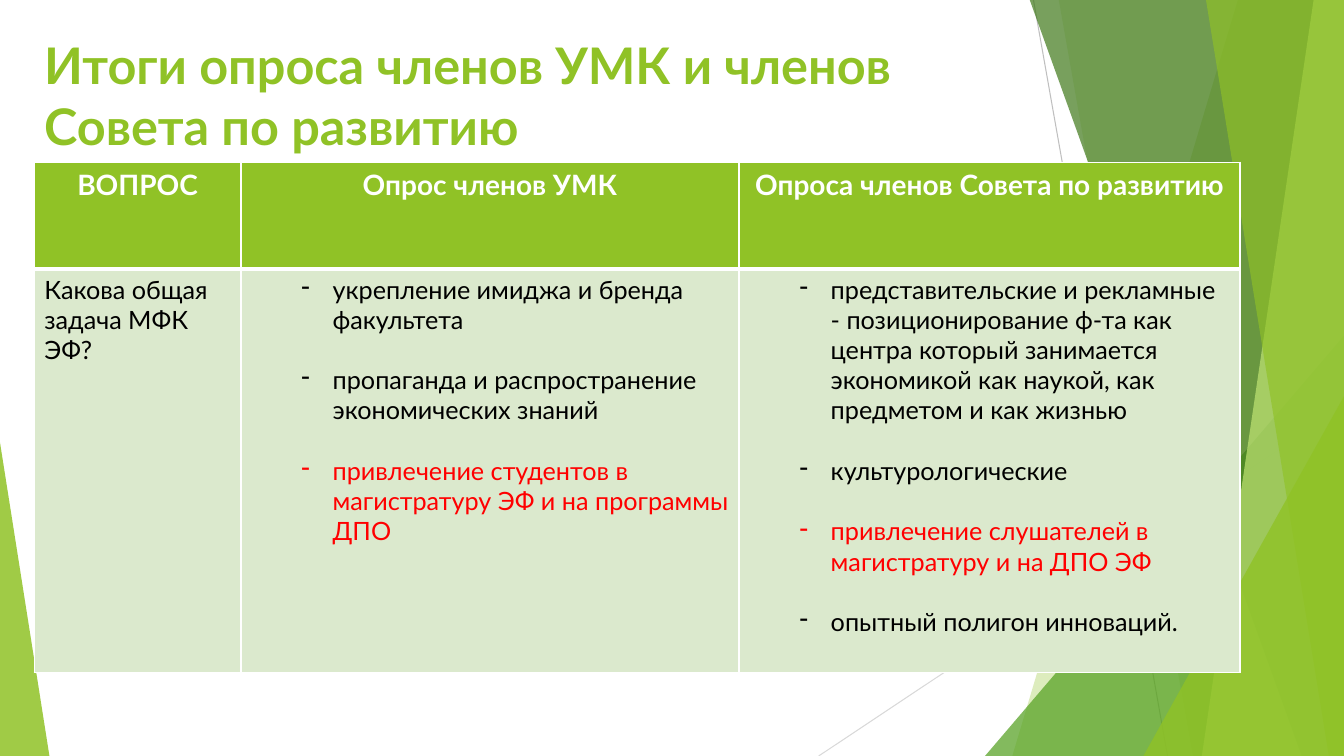
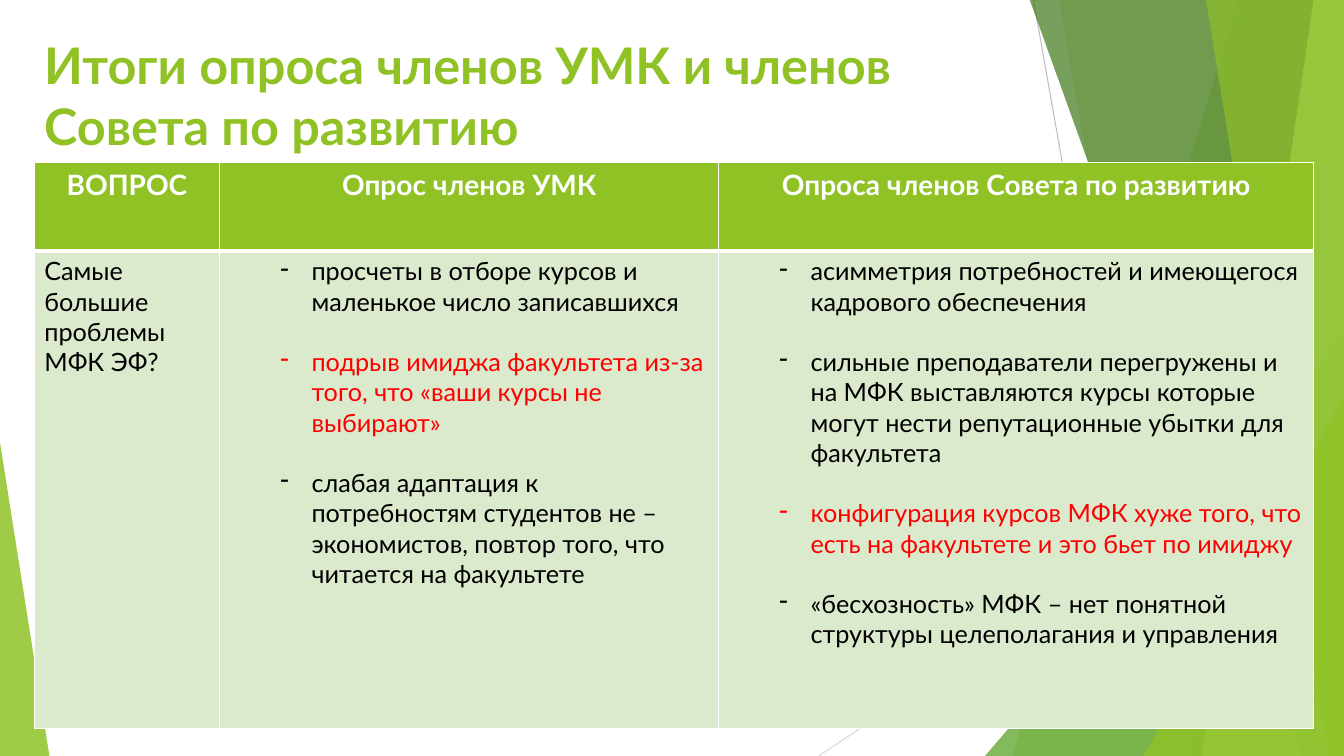
from dataclasses import dataclass

from lxml import etree
from pptx import Presentation
from pptx import util as u
from pptx.dml.color import RGBColor
from pptx.enum import shapes, text
from pptx.oxml import ns


@dataclass(frozen=True)
class Theme:
    font: str = "Lato"
    green: str = "90C226"
    leaf: str = "54A021"
    forest: str = "3F7819"
    lime: str = "C0E474"
    pale: str = "DBE9CD"
    white: str = "FFFFFF"
    black: str = "000000"
    red: str = "FF0000"
    dark_rule: str = "BFBFBF"
    light_rule: str = "D9D9D9"
    title_size: int = 36
    header_size: int = 20
    body_size: int = 18
    item_gap: float = 21.6
    rule_width: float = 0.75
    border: int = 1
    header_border: int = 3


WIDTH, HEIGHT = 13.33, 7.5
BAND_TOP = -0.01
LEFT = 0.34
TITLE = "Итоги опроса членов УМК и членов Совета по развитию"
HEADERS = ["ВОПРОС", "Опрос членов УМК", "Опроса членов Совета по развитию"]


class SurveyDeck:
    def __init__(self, theme):
        self.theme = theme
        self.deck = Presentation()
        self.deck.slide_width = u.Inches(WIDTH)
        self.deck.slide_height = u.Inches(HEIGHT)
        self.page = None

    def add_page(self):
        self.page = self.deck.slides.add_slide(self.deck.slide_layouts[6])
        self.backdrop()
        self.title(TITLE)

    def backdrop(self):
        theme = self.theme
        self.rule((10.25, 0), (11.58, HEIGHT), theme.dark_rule)
        self.rule((WIDTH, 4.03), (8.12, HEIGHT), theme.light_rule)
        self.band(12.28, 10.04, theme.green, 30)
        self.band(10.5, 11.83, theme.green, 20)
        self.corner(9.77, 3.33, 3.56, 1, theme.leaf, 72)
        self.band(10.21, 12.91, theme.forest, 70)
        self.band(13.03, 11.92, theme.lime, 70)
        self.band(11.96, 13.18, theme.green, 65)
        self.corner(11.34, 3.93, 1.99, 1, theme.green, 80)
        self.corner(0, 4.39, 0.49, 0, theme.green, 85)

    def rule(self, start, end, color):
        points = [u.Inches(value) for value in (*start, *end)]
        line = self.page.shapes.add_connector(shapes.MSO_CONNECTOR.STRAIGHT, *points)
        line.line.color.rgb = RGBColor.from_string(color)
        line.line.width = u.Pt(self.theme.rule_width)
        properties = line._element.find(ns.qn("p:spPr"))
        etree.SubElement(properties, ns.qn("a:effectLst"))

    def band(self, top_x, bottom_x, color, opacity):
        builder = self.page.shapes.build_freeform(u.Inches(top_x), u.Inches(BAND_TOP))
        outline = [(WIDTH, BAND_TOP), (WIDTH, HEIGHT), (bottom_x, HEIGHT)]
        builder.add_line_segments([(u.Inches(x), u.Inches(y)) for x, y in outline])
        self.tint(builder.convert_to_shape(), color, opacity)

    def corner(self, left, top, width, apex, color, opacity):
        triangle = self.page.shapes.add_shape(
            shapes.MSO_SHAPE.ISOSCELES_TRIANGLE, u.Inches(left), u.Inches(top),
            u.Inches(width), u.Inches(HEIGHT - top))
        triangle.adjustments[0] = apex
        self.tint(triangle, color, opacity)

    def tint(self, shape, color, opacity):
        shape.shadow.inherit = False
        shape.line.fill.background()
        shape.fill.solid()
        shape.fill.fore_color.rgb = RGBColor.from_string(color)
        swatch = shape._element.find(".//" + ns.qn("a:srgbClr"))
        etree.SubElement(swatch, ns.qn("a:alpha"), val=str(opacity * 1000))

    def title(self, words):
        box = self.page.shapes.add_textbox(
            u.Inches(LEFT), u.Inches(0.29), u.Inches(9.7), u.Inches(1.44))
        box.text_frame.word_wrap = True
        box.text_frame.text = words
        self.style(box.text_frame.paragraphs[0], self.theme.title_size,
                   self.theme.green, bold=True)

    def style(self, para, size, color, bold=False):
        for span in para.runs:
            span.font.name = self.theme.font
            span.font.size = u.Pt(size)
            span.font.bold = bold
            span.font.color.rgb = RGBColor.from_string(color)

    def table(self, columns, rows, question, answers):
        theme = self.theme
        frame = self.page.shapes.add_table(
            len(rows), len(columns), u.Inches(LEFT), u.Inches(1.61),
            u.Inches(sum(columns)), u.Inches(sum(rows)))
        grid = frame.table
        grid.horz_banding = False
        for column, width in zip(grid.columns, columns):
            column.width = u.Inches(width)
        for row, height in zip(grid.rows, rows):
            row.height = u.Inches(height)
        for index, words in enumerate(HEADERS):
            cell = grid.cell(0, index)
            cell.text_frame.text = words
            para = cell.text_frame.paragraphs[0]
            para.alignment = text.PP_ALIGN.CENTER
            self.style(para, theme.header_size, theme.white, bold=True)
            self.paint(cell, theme.green, bottom=theme.header_border)
        cell = grid.cell(1, 0)
        cell.text_frame.text = question
        self.style(cell.text_frame.paragraphs[0], theme.body_size, theme.black)
        self.paint(cell, theme.pale, top=theme.header_border)
        for index, items in enumerate(answers, 1):
            cell = grid.cell(1, index)
            self.bullets(cell.text_frame, items)
            self.paint(cell, theme.pale, top=theme.header_border)

    def bullets(self, frame, items):
        theme = self.theme
        for index, (words, color) in enumerate(items):
            para = frame.add_paragraph() if index else frame.paragraphs[0]
            para.text = words
            para.level = 1
            if index:
                para.space_before = u.Pt(theme.item_gap)
            self.style(para, theme.body_size, color)
            properties = para._p.get_or_add_pPr()
            properties.set("marL", str(u.Inches(0.81)))
            properties.set("indent", str(u.Inches(-0.31)))
            etree.SubElement(properties, ns.qn("a:buChar"), char="-")

    def paint(self, cell, color, top=None, bottom=None):
        cell.fill.solid()
        cell.fill.fore_color.rgb = RGBColor.from_string(color)
        thin = self.theme.border
        edges = {"lnL": thin, "lnR": thin, "lnT": top or thin, "lnB": bottom or thin}
        properties = cell._tc.get_or_add_tcPr()
        for index, (edge, width) in enumerate(edges.items()):
            line = etree.Element(ns.qn("a:" + edge), w=str(u.Pt(width)))
            fill = etree.SubElement(line, ns.qn("a:solidFill"))
            etree.SubElement(fill, ns.qn("a:srgbClr"), val=self.theme.white)
            properties.insert(index, line)


def main():
    theme = Theme()
    survey = SurveyDeck(theme)

    survey.add_page()
    survey.table([2.05, 4.94, 4.97], [1.06, 4], "Какова общая задача МФК ЭФ?", [
        [
            ("укрепление имиджа и бренда факультета", theme.black),
            ("пропаганда и распространение экономических знаний", theme.black),
            ("привлечение студентов в магистратуру ЭФ и на программы ДПО", theme.red),
        ],
        [
            ("представительские и рекламные\v- позиционирование ф-та как центра "
             "который занимается экономикой как наукой, как предметом и как жизнью",
             theme.black),
            ("культурологические", theme.black),
            ("привлечение слушателей в магистратуру и на ДПО ЭФ", theme.red),
            ("опытный полигон инноваций.", theme.black),
        ],
    ])

    survey.add_page()
    survey.table([1.84, 4.95, 5.9], [0.88, 4.74], "Самые большие проблемы МФК ЭФ?", [
        [
            ("просчеты в отборе курсов и маленькое число записавшихся", theme.black),
            ("подрыв имиджа факультета из-за того, что «ваши курсы не выбирают»",
             theme.red),
            ("слабая адаптация к потребностям студентов не –экономистов, "
             "повтор того, что читается на факультете", theme.black),
        ],
        [
            ("асимметрия потребностей и имеющегося кадрового обеспечения", theme.black),
            ("сильные преподаватели перегружены и на МФК выставляются курсы "
             "которые могут нести репутационные убытки для факультета", theme.black),
            ("конфигурация курсов МФК хуже того, что есть на факультете "
             "и это бьет по имиджу", theme.red),
            ("«бесхозность» МФК – нет понятной структуры целеполагания и управления",
             theme.black),
        ],
    ])

    survey.deck.save("out.pptx")


if __name__ == "__main__":
    main()
